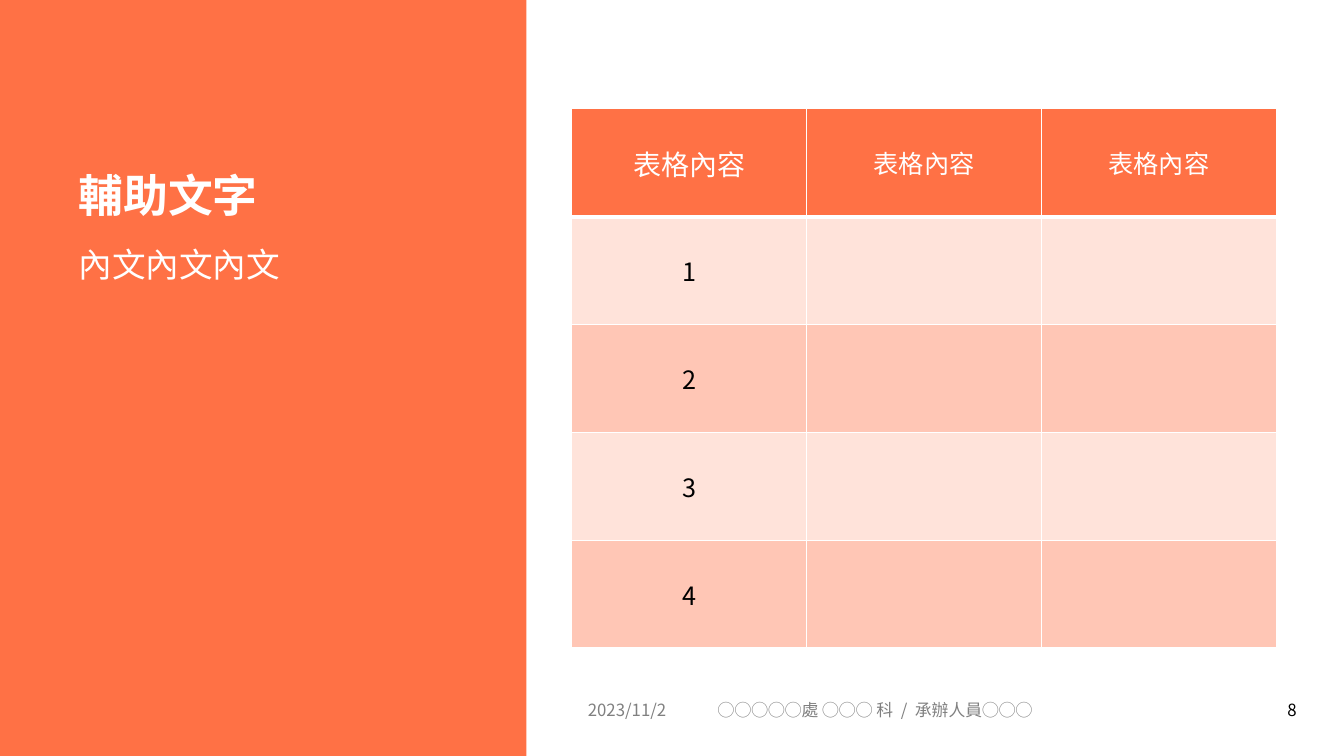
from lxml import etree
from pptx import Presentation
from pptx import util as u
from pptx.dml.color import RGBColor
from pptx.enum import shapes, text
from pptx.oxml.ns import qn

FONT = "Noto Sans CJK TC"
WIDTH, HEIGHT = 13.33, 7.5
ORANGE, WHITE, BLACK, GREY = "FF7145", "FFFFFF", "000000", "808080"
BANDS = ["FFE3DA", "FFC6B5"]

PANEL_WIDTH = 5.22
PANEL_MARGIN, PANEL_TEXT_WIDTH = 0.68, 4.03
TITLE_TOP, BODY_TOP = 0.5, 2.25
TABLE_LEFT, TABLE_TOP = 5.67, 1.08
COLUMN_WIDTH, ROW_HEIGHT = 2.33, 1.07
FOOTER_TOP, FOOTER_HEIGHT = 6.84, 0.4

HEADER = ["表格內容"] * 3
HEADER_SIZES = [20, 18, 18]
ROWS = [[label, "", ""] for label in "1234"]
TABLE_BOTTOM = TABLE_TOP + ROW_HEIGHT * (len(ROWS) + 1)

LEFT, CENTER, RIGHT = (text.PP_ALIGN.LEFT, text.PP_ALIGN.CENTER,
                       text.PP_ALIGN.RIGHT)
TOP, MIDDLE, BOTTOM = (text.MSO_ANCHOR.TOP, text.MSO_ANCHOR.MIDDLE,
                       text.MSO_ANCHOR.BOTTOM)

PANEL_TEXTS = [
    ("輔助文字", TITLE_TOP, BODY_TOP, BOTTOM, 32, True, 1.0),
    ("內文內文內文", BODY_TOP, TABLE_BOTTOM, TOP, 24, False, 1.3),
]
FOOTERS = [
    ("2023/11/2", 5.67, 1.1, CENTER, GREY),
    ("◯◯◯◯◯處 ◯◯◯ 科  /  承辦人員◯◯◯", 7.02, 5.02, LEFT, GREY),
    ("8", 12.3, 0.66, RIGHT, BLACK),
]


def rgb(value):
    return RGBColor.from_string(value)


def paint(target, color):
    target.fill.solid()
    target.fill.fore_color.rgb = rgb(color)


def write(para, words, color, align=LEFT, **font_format):
    """Put one run in a paragraph, in the same font for Latin and Chinese."""
    para.alignment = align
    span = para.add_run()
    span.text = words
    for name, value in {"name": FONT, **font_format}.items():
        setattr(span.font, name, value)
    span.font.color.rgb = rgb(color)
    properties = span.font._element
    etree.SubElement(properties, qn("a:ea"), typeface=FONT)


def add_text(page, place, words, color, anchor, spacing=1.0, **text_format):
    box = page.shapes.add_textbox(*map(u.Inches, place))
    box.text_frame.word_wrap = True
    box.text_frame.vertical_anchor = anchor
    para = box.text_frame.paragraphs[0]
    para.line_spacing = spacing
    write(para, words, color, **text_format)


def add_borders(cell, bottom_width):
    properties = cell._tc.get_or_add_tcPr()
    widths = {"a:lnL": 1, "a:lnR": 1, "a:lnT": 1, "a:lnB": bottom_width}
    for index, (side, width) in enumerate(widths.items()):
        line = etree.Element(qn(side), w=str(u.Pt(width)))
        fill = etree.SubElement(line, qn("a:solidFill"))
        etree.SubElement(fill, qn("a:srgbClr"), val=WHITE)
        properties.insert(index, line)


def add_panel(page):
    panel = page.shapes.add_shape(shapes.MSO_SHAPE.RECTANGLE, 0, 0,
                                  u.Inches(PANEL_WIDTH), u.Inches(HEIGHT))
    panel.shadow.inherit = False
    paint(panel, ORANGE)
    panel.line.fill.background()
    for words, top, bottom, anchor, size, bold, spacing in PANEL_TEXTS:
        place = PANEL_MARGIN, top, PANEL_TEXT_WIDTH, bottom - top
        add_text(page, place, words, WHITE, anchor, spacing,
                 size=u.Pt(size), bold=bold)


def add_grid(page):
    rows = [HEADER] + ROWS
    size = COLUMN_WIDTH * len(HEADER), ROW_HEIGHT * len(rows)
    place = map(u.Inches, (TABLE_LEFT, TABLE_TOP, *size))
    table = page.shapes.add_table(len(rows), len(HEADER), *place).table
    for r, row in enumerate(rows):
        is_header = r == 0
        for c, words in enumerate(row):
            cell = table.cell(r, c)
            cell.vertical_anchor = MIDDLE
            paint(cell, ORANGE if is_header else BANDS[(r - 1) % 2])
            add_borders(cell, 3 if is_header else 1)
            if words:
                write(cell.text_frame.paragraphs[0], words,
                      WHITE if is_header else BLACK, CENTER, bold=False,
                      size=u.Pt(HEADER_SIZES[c] if is_header else 18))


def add_footers(page):
    for words, left, width, align, color in FOOTERS:
        place = left, FOOTER_TOP, width, FOOTER_HEIGHT
        add_text(page, place, words, color, MIDDLE, align=align, size=u.Pt(12))


def main():
    deck = Presentation()
    deck.slide_width, deck.slide_height = u.Inches(WIDTH), u.Inches(HEIGHT)
    page = deck.slides.add_slide(deck.slide_layouts[6])
    add_panel(page)
    add_grid(page)
    add_footers(page)
    deck.save("out.pptx")


if __name__ == "__main__":
    main()
